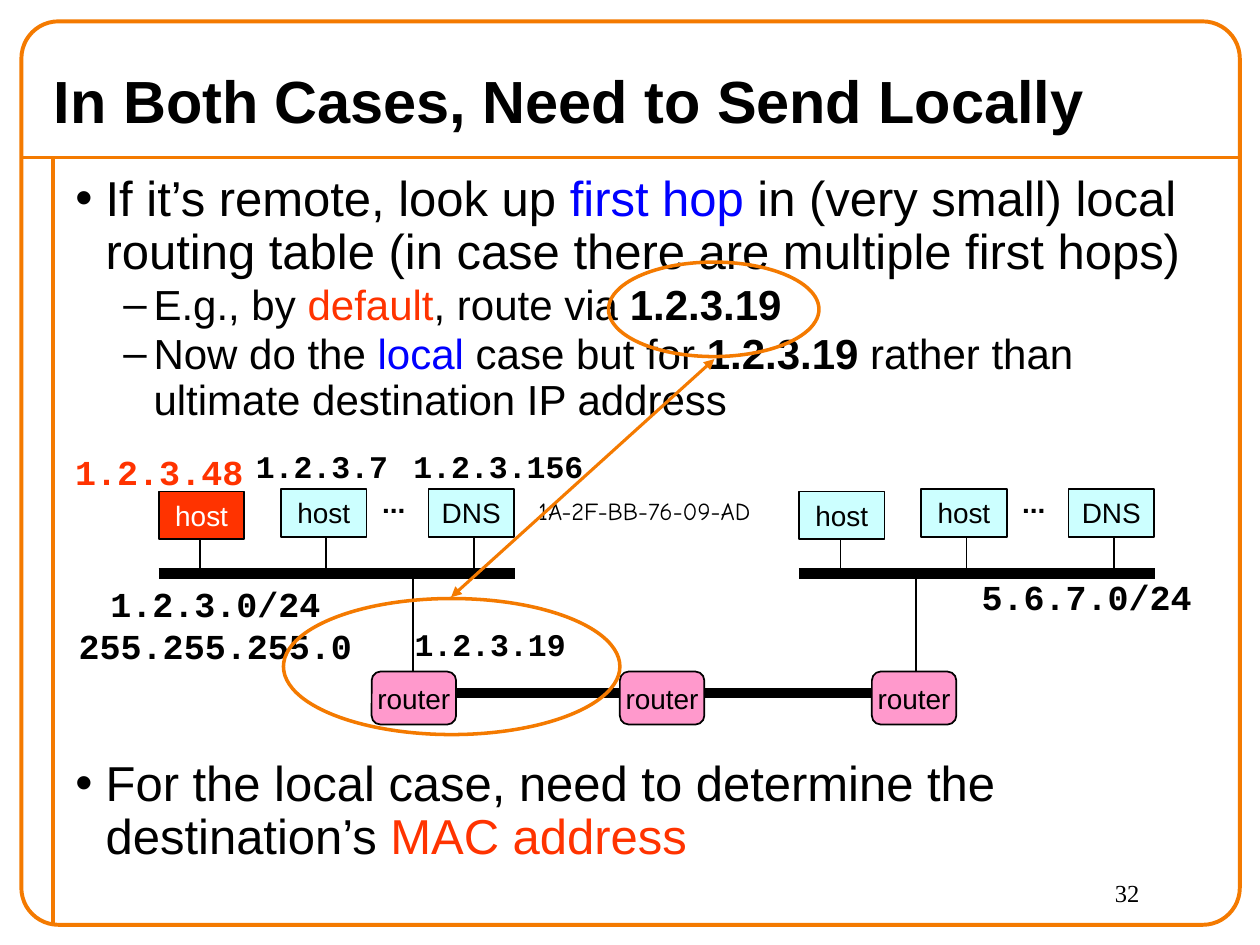
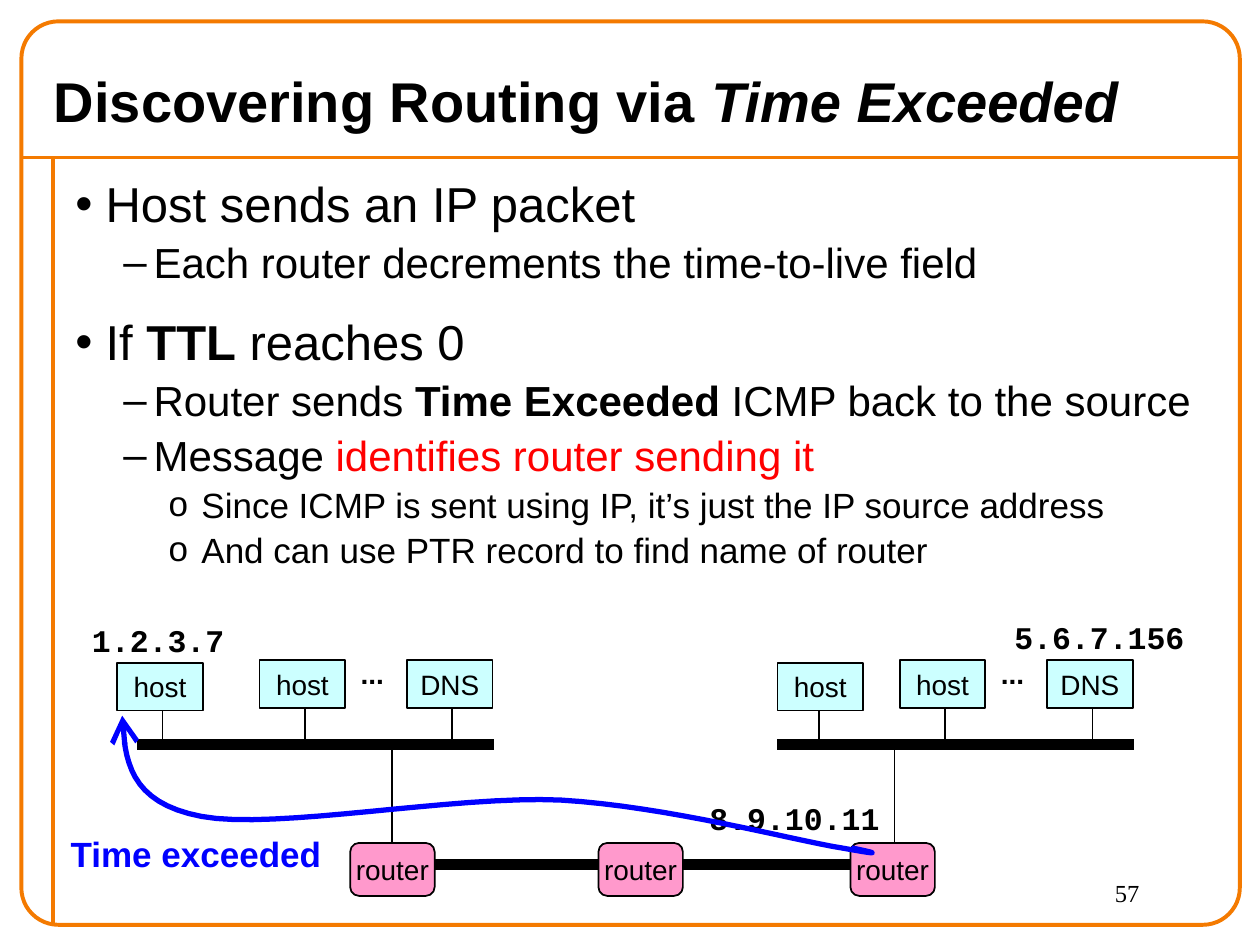
"""Build two slides on local delivery and on route discovery."""
import pptx
import pptx.util
import pptx.dml.color
import pptx.enum.shapes
import pptx.enum.text
import pptx.oxml.ns
import lxml.etree

Inches = pptx.util.Inches
Pt = pptx.util.Pt
Kind = pptx.enum.shapes.MSO_SHAPE
Align = pptx.enum.text.PP_ALIGN
Anchor = pptx.enum.text.MSO_ANCHOR
qn = pptx.oxml.ns.qn
add = lxml.etree.SubElement

HUES = {"black": "000000", "white": "FFFFFF", "orange": "F47A00", "blue": "0000FF",
        "flame": "FF3300", "red": "FF0000", "aqua": "CCFFFF", "pink": "FF99CC"}
RGB = {name: pptx.dml.color.RGBColor.from_string(code) for name, code in HUES.items()}
MONO = "Courier New"
BOLD = {"bold": True}
BLUE = {"color": "blue"}
FLAME = {"color": "flame"}


def say(slide, at, text="", kind=None, fill=None, edge="black", width=1, adj=None,
        size=16, font="Arial", color="black", bold=False, align=Align.CENTER,
        anchor=Anchor.TOP, wrap=False):
    box = [Inches(v) for v in at]
    if kind is None:
        shape = slide.shapes.add_textbox(*box)
    else:
        shape = slide.shapes.add_shape(kind, *box)
        shape.shadow.inherit = False
        shape.line.color.rgb = RGB[edge]
        shape.line.width = Pt(width)
        if fill:
            shape.fill.solid()
            shape.fill.fore_color.rgb = RGB[fill]
        else:
            shape.fill.background()
        if adj:
            shape.adjustments[0] = adj
    frame = shape.text_frame
    frame.word_wrap = wrap
    frame.vertical_anchor = anchor
    if not wrap:
        frame.margin_left = frame.margin_right = 0
    paras = [[text]] if isinstance(text, str) else text
    for num, runs in enumerate(paras):
        para = frame.add_paragraph() if num else frame.paragraphs[0]
        para.alignment = align
        for part in runs:
            words, mark = (part, {}) if isinstance(part, str) else part
            if not words:
                continue
            run = para.add_run()
            run.text = words
            run.font.name = font
            run.font.size = Pt(size)
            run.font.bold = mark.get("bold", bold)
            run.font.italic = mark.get("italic", False)
            run.font.color.rgb = RGB[mark.get("color", color)]
    return frame


def link(slide, x1, y1, x2, y2, width=1, color="black", heads=()):
    line = slide.shapes.add_connector(pptx.enum.shapes.MSO_CONNECTOR.STRAIGHT,
                                      Inches(x1), Inches(y1), Inches(x2), Inches(y2))
    line.line.color.rgb = RGB[color]
    line.line.width = Pt(width)
    props = line._element.spPr
    for end in heads:
        add(props.find(qn("a:ln")), qn(end), type="triangle")
    add(props, qn("a:effectLst"))


PAGES = [
    {"page": "32", "size": 34, "title": ["In Both Cases, Need to Send Locally"],
     "lines": 0.9, "gap": 191.5, "shift": (0, 0), "nudge": (0, 0), "first": ("flame", "white"),
     "body": [
         (0, ["If it’s remote, look up ", ("first hop", BLUE),
              " in (very small) local routing table (in case there are multiple first hops)"]),
         (1, ["E.g., by ", ("default", FLAME), ", route via ", ("1.2.3.19", BOLD)]),
         (1, ["Now do the ", ("local", BLUE), " case but for ", ("1.2.3.19", BOLD),
              " rather than ultimate destination IP address"]),
         (0, ["For the local case, need to determine the destination’s ",
              ("MAC address", FLAME)])],
     "tags": [("5.6.7.0/24", 7.69, 4.52, 1.87, 20, "black"),
              ("1.2.3.7", 1.93, 3.5, 1.25, 18, "black"),
              ("1.2.3.156", 3.18, 3.5, 1.55, 18, "black"),
              ("1.2.3.48", 0.5, 3.53, 1.53, 20, "flame"),
              ("1.2.3.19", 3.19, 4.91, 1.4, 18, "black")]},
    {"page": "57", "size": 32,
     "title": ["Discovering Routing via ", ("Time Exceeded", {"bold": True, "italic": True})],
     "lines": 1, "gap": None, "shift": (-0.17, 1.36), "nudge": (-0.16, -0.13),
     "first": ("aqua", "black"),
     "body": [
         (0, ["Host sends an IP packet"]),
         (1, ["Each router decrements the time-to-live field"]),
         (0, ["If ", ("TTL", BOLD), " reaches 0"]),
         (1, ["Router sends ", ("Time Exceeded", BOLD), " ICMP back to the source"]),
         (1, ["Message ", ("identifies router sending it", {"color": "red"})]),
         (2, ["Since ICMP is sent using IP, it’s just the IP source address"]),
         (2, ["And can use PTR record to find name of router"])],
     "tags": [("1.2.3.7", 0.63, 4.88, 1.25, 18, "black"),
              ("8.9.10.11", 5.53, 6.29, 1.55, 18, "black"),
              ("5.6.7.156", 7.95, 4.86, 1.55, 18, "black")]},
]
LEVELS = [("•", 28, 0.24, -0.24, 50), ("–", 24, 0.62, -0.24, 10), ("o", 20, 1, -0.26, 10)]

deck = pptx.Presentation()
deck.slide_width, deck.slide_height = Inches(10), Inches(7.5)
slides = []

for page in PAGES:
    slide = deck.slides.add_slide(deck.slide_layouts[6])
    slides.append(slide)

    link(slide, 0.17, 1.25, 9.83, 1.25, 2.25, "orange")
    link(slide, 0.42, 1.25, 0.42, 7.33, 2.25, "orange")
    say(slide, (0.17, 0.17, 9.67, 7.17), kind=Kind.ROUNDED_RECTANGLE, edge="orange",
        width=2.25, adj=0.041)
    say(slide, (8.75, 6.92, 1, 0.42), page["page"], size=14, font="Times New Roman",
        align=Align.LEFT, wrap=True)
    say(slide, (0.33, 0.42, 9.42, 0.75), [page["title"]], size=page["size"], bold=True,
        align=Align.LEFT, anchor=Anchor.MIDDLE, wrap=True)

    body = say(slide, (0.5, 1.33, 9.25, 6), [runs for _, runs in page["body"]],
               align=Align.LEFT, wrap=True)
    for para, (level, _) in zip(body.paragraphs, page["body"]):
        mark, size, left, hang, before = LEVELS[level]
        para.level = level
        para.line_spacing = page["lines"]
        para.space_before = Pt(0)
        props = para._p.get_or_add_pPr()
        props.set("marL", str(Inches(left)))
        props.set("indent", str(Inches(hang)))
        space = props.find(qn("a:spcBef"))
        space.clear()
        add(space, qn("a:spcPct"), val=str(before * 1000))
        add(props, qn("a:buFont"), typeface="Arial")
        add(props, qn("a:buChar"), char=mark)
        for run in para.runs:
            run.font.size = Pt(size)
    if page["gap"]:
        body.paragraphs[-1].space_before = Pt(page["gap"])

    dx, dy = page["shift"]
    for side, start in enumerate((1.26, 6.34)):
        x, y = start + dx, 4.55 + dy
        move, slip = (0, 0) if side else page["nudge"]
        fill, ink = ("aqua", "black") if side else page["first"]
        link(slide, x, y, x + 2.83, y, 6)
        for drop in (0.33 + slip, 1.33, 2.5):
            link(slide, x + drop, y - 0.34, x + drop, y)
        for name, off, rise, hue, tint in (("host", move, 0.65, fill, ink),
                                           ("host", 0.97, 0.67, "aqua", "black"),
                                           ("DNS", 2.14, 0.67, "aqua", "black")):
            say(slide, (x + off, y - rise, 0.68, 0.38), name, kind=Kind.RECTANGLE,
                fill=hue, color=tint, anchor=Anchor.MIDDLE)
        say(slide, (x + 1.67, y - 0.75, 0.39, 0.37), "...", bold=True, anchor=Anchor.MIDDLE)

    for x in (3.28, 7.27):
        link(slide, x + dx, 4.53 + dy, x + dx, 5.33 + dy)
    for x in (3.59, 5.59):
        link(slide, x + dx, 5.5 + dy, x + 1.33 + dx, 5.5 + dy, 6)
    for x in (2.95, 4.92, 6.92):
        say(slide, (x + dx, 5.33 + dy, 0.67, 0.42), "router", kind=Kind.ROUNDED_RECTANGLE,
            fill="pink", anchor=Anchor.MIDDLE)
    for name, x, y, wide, size, hue in page["tags"]:
        say(slide, (x, y, wide, 0.4), name, size=size, font=MONO, color=hue, bold=True)

local, trace = slides

say(local, (0.42, 4.57, 2.58, 0.77), [["1.2.3.0/24"], ["255.255.255.0"]], size=20,
    font=MONO, bold=True, wrap=True)
say(local, (4.08, 3.89, 2.07, 0.33), "1A-2F-BB-76-09-AD", size=14, font="Comic Neue",
    anchor=Anchor.MIDDLE)
for ring in ((2.25, 4.75, 2.67, 1.08), (4.83, 2.08, 1.67, 0.75)):
    say(local, ring, kind=Kind.OVAL, edge="orange", width=2)
link(local, 5.67, 2.85, 3.58, 4.74, 1.75, "orange", ("a:headEnd", "a:tailEnd"))

START = (6.76, 6.73)
CURVES = [((6.91, 6.76), (7.07, 6.8), (6.68, 6.73)),
          ((6.3, 6.67), (5.3, 6.4), (4.45, 6.35)),
          ((3.61, 6.31), (2.18, 6.59), (1.6, 6.48)),
          ((1.02, 6.37), (0.99, 6.03), (0.97, 5.68))]
STEPS = 16
dots, last = [], START
for one, two, end in CURVES:
    for step in range(1, STEPS + 1):
        t = step / STEPS
        u = 1 - t
        dots.append([Inches(u**3 * a + 3 * u * u * t * b + 3 * u * t * t * c + t**3 * d)
                     for a, b, c, d in zip(last, one, two, end)])
    last = end
pen = trace.shapes.build_freeform(Inches(START[0]), Inches(START[1]))
pen.add_line_segments(dots, close=False)
reply = pen.convert_to_shape()
reply.shadow.inherit = False
reply.fill.background()
reply.line.color.rgb = RGB["blue"]
reply.line.width = Pt(3)
edge = reply._element.spPr.find(qn("a:ln"))
add(edge, qn("a:round"))
add(edge, qn("a:tailEnd"), type="arrow", w="lg", len="lg")
say(trace, (0.46, 6.56, 2.19, 0.43), "Time exceeded", size=20, color="blue", bold=True)

deck.save("out.pptx")
